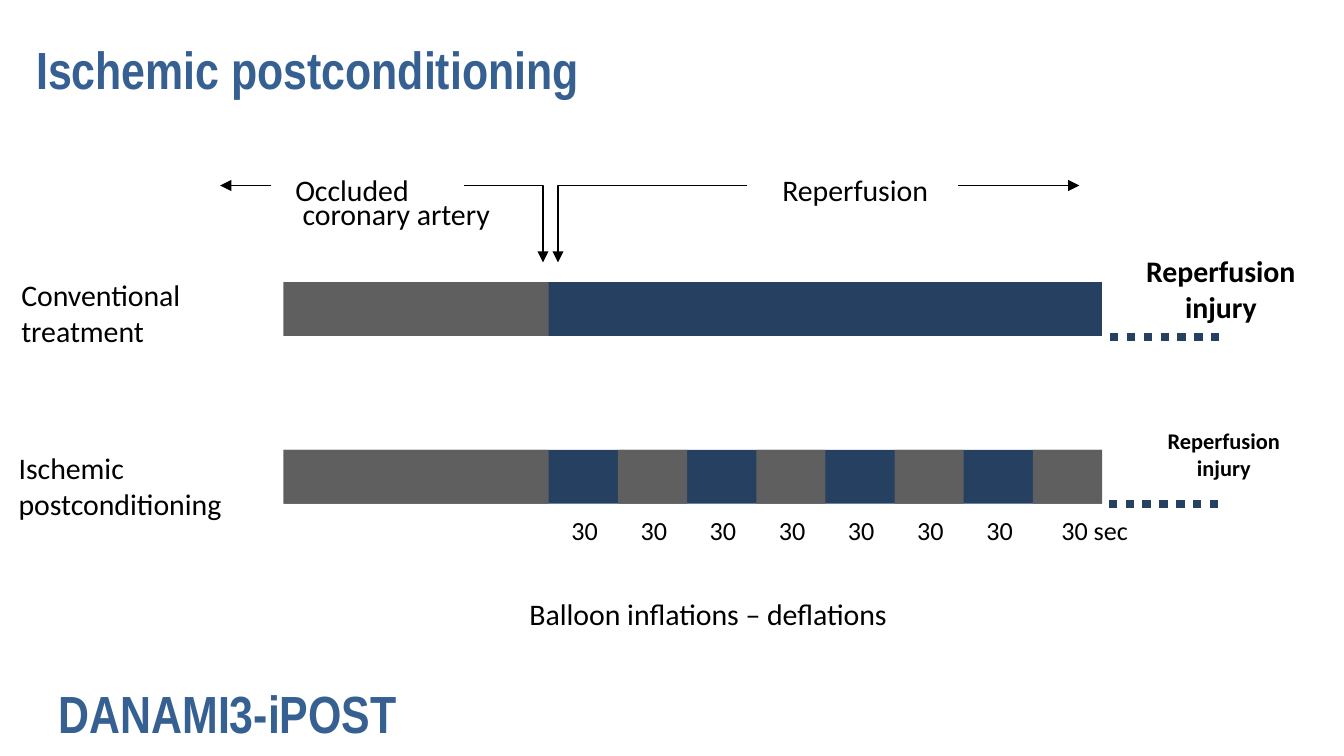
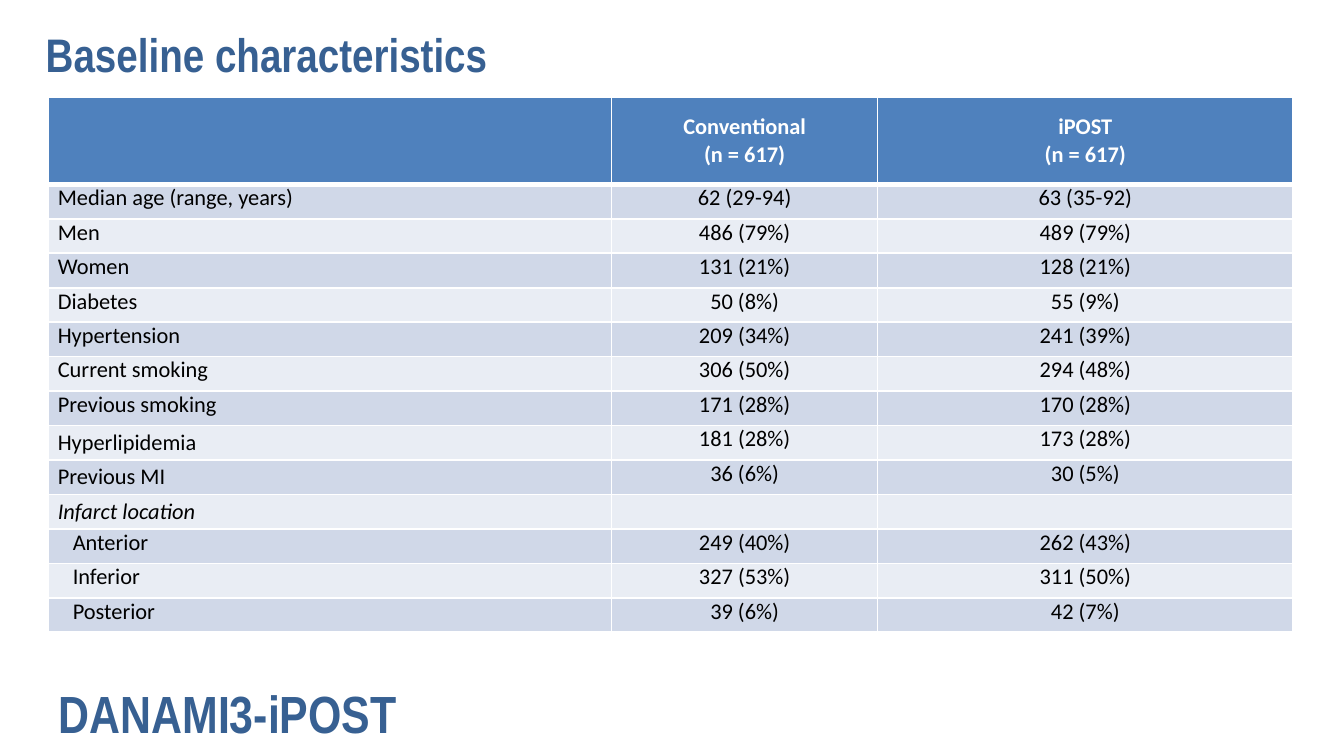
from typing import NamedTuple

from pptx import Presentation
from pptx.dml.color import RGBColor
from pptx.enum.dml import MSO_LINE
from pptx.enum.shapes import MSO_CONNECTOR as CONNECTOR, MSO_SHAPE as SHAPE
from pptx.enum.text import MSO_ANCHOR as ANCHOR, MSO_AUTO_SIZE as AUTO_SIZE, PP_ALIGN as ALIGN
from pptx.oxml.ns import qn
from pptx.oxml.xmlchemy import OxmlElement
from pptx.shapes.connector import Connector
from pptx.slide import Slide
from pptx.table import _Cell as Cell
from pptx.text.text import TextFrame
from pptx.util import Pt

COLORS = {
    "heading": "376092",
    "reperfused": "254061",
    "occluded": "5F5F5F",
    "text": "000000",
    "header": "4F81BD",
    "band_dark": "D0D8E8",
    "band_light": "E9EDF4",
    "white": "FFFFFF",
}
HEADING_FONT = "Arial Narrow"
BODY_FONT = "Calibri"

BAR_LEFT, BAR_RIGHT, BAR_HEIGHT = 152, 590.4, 28.8
OCCLUDED_WIDTH = 142
CONVENTIONAL_TOP, POSTCONDITIONING_TOP = 151.2, 241
CYCLES = 8
CYCLE_START = BAR_LEFT + OCCLUDED_WIDTH
CYCLE_WIDTH = (BAR_RIGHT - CYCLE_START) / CYCLES
ARROW_TOP, ARROW_TIP = 99.4, 140.6


class Box(NamedTuple):
    left: float
    top: float
    width: float
    height: float


class Label(NamedTuple):
    text: str
    box: Box
    size: float = 16
    bold: bool = False
    align: ALIGN = ALIGN.CENTER


class Arrow(NamedTuple):
    start: tuple[float, float]
    tip: tuple[float, float]


class Characteristic(NamedTuple):
    name: str
    conventional: str = ""
    ipost: str = ""
    anchor: ANCHOR = ANCHOR.TOP
    indent: float = 0
    italic: bool = False


TITLE_BOXES = [Box(12.2, 15, 655, 43.2), Box(17.3, 10.8, 683.3, 36)]
TRIAL_BOX = Box(24.5, 363.6, 236.2, 36)

LABELS = [
    Label("Conventional\ntreatment", Box(4.3, 144.7, 101.5, 46), align=ALIGN.LEFT),
    Label("Ischemic\npostconditioning", Box(2.9, 237.6, 125.3, 46), align=ALIGN.LEFT),
    Label("Occluded", Box(150.5, 88.6, 76.3, 26.6)),
    Label("coronary artery", Box(154, 101.5, 116.6, 26.6)),
    Label("Reperfusion", Box(411, 88.6, 94.3, 26.6)),
    Label("Reperfusion\ninjury", Box(606.2, 131.8, 95.8, 46), bold=True),
    Label("Reperfusion\ninjury", Box(617.8, 225.4, 75.6, 36.7), size=12, bold=True),
    Label("Balloon inflations – deflations", Box(275, 315.4, 208.8, 26.6)),
    Label("30 sec", Box(560.9, 272.2, 51.1, 24.5), size=14),
]
STRAIGHT_ARROWS = [
    Arrow((513.4, ARROW_TOP), (578.2, ARROW_TOP)),
    Arrow((145.4, ARROW_TOP), (118, ARROW_TOP)),
]
BENT_ARROWS = [
    Arrow((248.4, ARROW_TOP), (290.9, ARROW_TIP)),
    Arrow((400.3, ARROW_TOP), (299, ARROW_TIP)),
]

TABLE_BOX = Box(26, 52, 666.7, 286.8)
COLUMN_WIDTHS = [301.7, 142.5, 222.5]
HEADER_HEIGHT, ROW_HEIGHT = 46.8, 18.46
SUBGROUP_INDENT = 8
HEADINGS = ["", "Conventional\v(n = 617)", "iPOST\v(n = 617)"]
CHARACTERISTICS = [
    Characteristic("Median age (range, years)", "62 (29-94)", "63 (35-92)"),
    Characteristic("Men", "486 (79%)", "489 (79%)"),
    Characteristic("Women", "131 (21%)", "128 (21%)"),
    Characteristic("Diabetes", "50 (8%)", "55 (9%)"),
    Characteristic("Hypertension", "209 (34%)", "241 (39%)"),
    Characteristic("Current smoking", "306 (50%)", "294 (48%)"),
    Characteristic("Previous smoking", "171 (28%)", "170 (28%)"),
    Characteristic("Hyperlipidemia", "181 (28%)", "173 (28%)", ANCHOR.MIDDLE),
    Characteristic("Previous MI", "36 (6%)", "30 (5%)", ANCHOR.MIDDLE),
    Characteristic("Infarct location", anchor=ANCHOR.MIDDLE, italic=True),
    Characteristic("Anterior", "249 (40%)", "262 (43%)", indent=SUBGROUP_INDENT),
    Characteristic("Inferior", "327 (53%)", "311 (50%)", indent=SUBGROUP_INDENT),
    Characteristic("Posterior", "39 (6%)", "42 (7%)", indent=SUBGROUP_INDENT),
]


def rgb(color: str) -> RGBColor:
    return RGBColor.from_string(COLORS[color])


def points(values: tuple[float, ...]) -> list[Pt]:
    return [Pt(value) for value in values]


def write(frame: TextFrame, text: str, size: float, color: str = "text",
          font: str = BODY_FONT, bold: bool = False, italic: bool = False,
          align: ALIGN = ALIGN.LEFT) -> None:
    frame.text = text
    for paragraph in frame.paragraphs:
        paragraph.alignment = align
        paragraph.font.name = font
        paragraph.font.size = Pt(size)
        paragraph.font.bold = bold
        paragraph.font.italic = italic
        paragraph.font.color.rgb = rgb(color)


def write_heading(frame: TextFrame, text: str, size: float) -> None:
    frame.auto_size = AUTO_SIZE.NONE
    frame.word_wrap = True
    frame.vertical_anchor = ANCHOR.MIDDLE
    write(frame, text, size, "heading", HEADING_FONT, bold=True)


def add_trial_slide(prs: Presentation, title: str, box: Box, size: float) -> Slide:
    """Add a slide with its title and the trial name at the foot."""
    slide = prs.slides.add_slide(prs.slide_layouts[5])
    heading = slide.shapes.title
    heading.left, heading.top, heading.width, heading.height = points(box)
    write_heading(heading.text_frame, title, size)
    trial = slide.shapes.add_textbox(*points(TRIAL_BOX))
    write_heading(trial.text_frame, "DANAMI3-iPOST", 28)
    return slide


def add_label(slide: Slide, label: Label) -> None:
    frame = slide.shapes.add_textbox(*points(label.box)).text_frame
    frame.word_wrap = False
    frame.auto_size = AUTO_SIZE.SHAPE_TO_FIT_TEXT
    write(frame, label.text, label.size, bold=label.bold, align=label.align)


def add_bar(slide: Slide, left: float, top: float, width: float, color: str) -> None:
    bar = slide.shapes.add_shape(SHAPE.RECTANGLE, *points((left, top, width, BAR_HEIGHT)))
    bar.shadow.inherit = False
    bar.fill.solid()
    bar.fill.fore_color.rgb = rgb(color)
    bar.line.fill.background()


def add_line(slide: Slide, start: tuple[float, float], end: tuple[float, float],
             color: str, width: float) -> Connector:
    line = slide.shapes.add_connector(CONNECTOR.STRAIGHT, *points(start + end))
    line.line.color.rgb = rgb(color)
    line.line.width = Pt(width)
    line._element.spPr.append(OxmlElement("a:effectLst"))
    return line


def add_arrow(slide: Slide, arrow: Arrow, bent: bool = False) -> None:
    line = add_line(slide, arrow.start, arrow.tip, "text", 0.75)
    properties = line._element.spPr
    if bent:
        properties.find(qn("a:prstGeom")).set("prst", "bentConnector2")
    head = OxmlElement("a:tailEnd")
    head.set("type", "triangle")
    properties.find(qn("a:ln")).append(head)


def add_injury_line(slide: Slide, left: float, top: float) -> None:
    line = add_line(slide, (left, top), (left + 61.2, top), "reperfused", 4.5)
    line.line.dash_style = MSO_LINE.ROUND_DOT


def build_postconditioning(prs: Presentation) -> None:
    slide = add_trial_slide(prs, "Ischemic postconditioning", TITLE_BOXES[0], 28)
    for top in (CONVENTIONAL_TOP, POSTCONDITIONING_TOP):
        add_bar(slide, BAR_LEFT, top, BAR_RIGHT - BAR_LEFT, "reperfused")
        add_bar(slide, BAR_LEFT, top, OCCLUDED_WIDTH, "occluded")
    for cycle in range(CYCLES):
        left = CYCLE_START + cycle * CYCLE_WIDTH
        if cycle % 2:
            add_bar(slide, left, POSTCONDITIONING_TOP, CYCLE_WIDTH, "occluded")
        if cycle < CYCLES - 1:
            box = Box(left + (CYCLE_WIDTH - 28.8) / 2 + 0.7, 272.2, 28.8, 24.5)
            add_label(slide, Label("30", box, size=14))
    for arrow in STRAIGHT_ARROWS:
        add_arrow(slide, arrow)
    for arrow in BENT_ARROWS:
        add_arrow(slide, arrow, bent=True)
    add_injury_line(slide, 594.7, 180.7)
    add_injury_line(slide, 594, 270)
    for label in LABELS:
        add_label(slide, label)


def set_borders(cell: Cell, top: float, bottom: float) -> None:
    widths = {"a:lnL": 1, "a:lnR": 1, "a:lnT": top, "a:lnB": bottom}
    for tag, width in widths.items():
        border = OxmlElement(tag)
        border.set("w", str(Pt(width)))
        fill = OxmlElement("a:solidFill")
        color = OxmlElement("a:srgbClr")
        color.set("val", COLORS["white"])
        fill.append(color)
        border.append(fill)
        cell._tc.get_or_add_tcPr().append(border)


def format_cell(cell: Cell, fill: str, anchor: ANCHOR, indent: float = 0,
                top: float = 1, bottom: float = 1) -> None:
    set_borders(cell, top, bottom)
    cell.fill.solid()
    cell.fill.fore_color.rgb = rgb(fill)
    cell.vertical_anchor = anchor
    cell.margin_left, cell.margin_right = Pt(5 + indent), Pt(5)
    cell.margin_top = cell.margin_bottom = 0


def build_baseline(prs: Presentation) -> None:
    slide = add_trial_slide(prs, "Baseline characteristics", TITLE_BOXES[1], 25.2)
    table = slide.shapes.add_table(
        len(CHARACTERISTICS) + 1, len(HEADINGS), *points(TABLE_BOX)).table
    for column, width in zip(table.columns, COLUMN_WIDTHS):
        column.width = Pt(width)
    for number, row in enumerate(table.rows):
        row.height = Pt(ROW_HEIGHT if number else HEADER_HEIGHT)

    for cell, heading in zip(table.rows[0].cells, HEADINGS):
        format_cell(cell, "header", ANCHOR.MIDDLE, bottom=3)
        write(cell.text_frame, heading, 12, "white", bold=True, align=ALIGN.CENTER)
    for number, item in enumerate(CHARACTERISTICS, start=1):
        band = "band_dark" if number % 2 else "band_light"
        top = 3 if number == 1 else 1
        name, *groups = table.rows[number].cells
        format_cell(name, band, item.anchor, item.indent, top)
        write(name.text_frame, item.name, 12, italic=item.italic)
        for cell, value in zip(groups, (item.conventional, item.ipost)):
            format_cell(cell, band, ANCHOR.TOP, top=top)
            write(cell.text_frame, value, 12, align=ALIGN.CENTER)


def main() -> None:
    prs = Presentation()
    prs.slide_width, prs.slide_height = Pt(720), Pt(405)
    build_postconditioning(prs)
    build_baseline(prs)
    prs.save("out.pptx")


if __name__ == "__main__":
    main()
